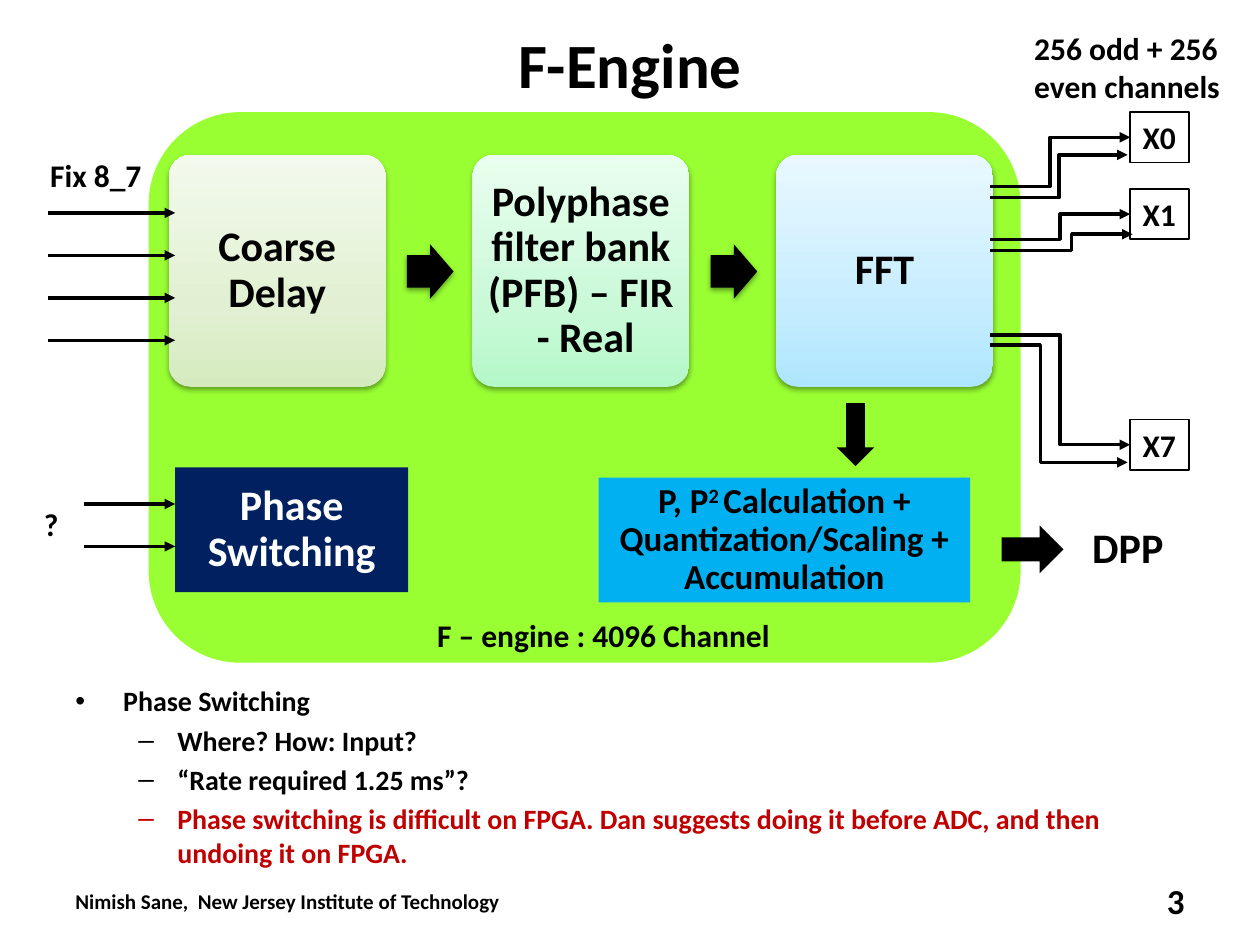
from copy import deepcopy

from lxml.etree import SubElement
from pptx import Presentation
from pptx.dml.color import RGBColor
from pptx.enum.shapes import MSO_CONNECTOR as LINK, MSO_SHAPE as SHAPE
from pptx.enum.text import MSO_ANCHOR as ANCHOR, PP_ALIGN as ALIGN
from pptx.oxml.ns import qn
from pptx.util import Inches, Pt

COLORS = {
    "black": "000000", "white": "FFFFFF", "green": "99FF33",
    "sky": "00B0F0", "navy": "002060", "red": "C00000",
}
STAGES = [
    ("Coarse Delay", ["D5EBBF", "E1F0D2", "F3FAED"]),
    ("Polyphase filter bank (PFB) – FIR  - Real", ["B4F8C8", "CAF9D8", "EAFEEF"]),
    ("FFT", ["AEE6FF", "C6EDFF", "E9F8FF"]),
]
STAGE_LEFT, STAGE_TOP, STAGE_STEP = 1.34, 1.23, 2.41
OUTPUTS = [
    ("X0", 0.89, (1.48, 0.427), (1.57, 8.95, 1.23, 0.5)),
    ("X1", 1.5, (1.9, 0.5), (1.99, 8.99, 1.86, 0.572)),
    ("X7", 3.33, (2.66, 0.5), (2.74, 8.95, 3.67, 0.364)),
]
LABELS = [
    ("Nimish Sane,  New Jersey Institute of Technology", (0.5, 6.95, 3.79, 0.4),
     {"size": 12, "anchor": ANCHOR.MIDDLE}),
    ("3", (7.17, 6.95, 2.33, 0.4),
     {"size": 20, "anchor": ANCHOR.MIDDLE, "align": ALIGN.RIGHT}),
    ("Fix 8_7", (0.3, 1.19, 0.97, 0.4), {}),
    ("DPP", (8.57, 4.09, 0.77, 0.5), {"size": 24, "wrap": False}),
    ("F – engine : 4096 Channel", (3.37, 4.84, 2.85, 0.4), {}),
    ("256 odd + 256 even channels", (8.11, 0.18, 1.72, 0.71), {}),
    ("?", (0.25, 3.96, 0.46, 0.4), {}),
]
NOTES = [
    ("Phase Switching", "•", 0.38, 0.38, "black"),
    ("Where? How: Input?", "–", 0.81, 0.31, "black"),
    ("“Rate required 1.25 ms”?", "–", 0.81, 0.31, "black"),
    ("Phase switching is difficult on FPGA. Dan suggests doing it before ADC, "
     "and then undoing it on FPGA.", "–", 0.81, 0.31, "red"),
]


def rgb(name):
    return RGBColor.from_string(COLORS.get(name, name))


def add_span(para, text, size, color="black"):
    span = para.add_run()
    span.text = text
    for name, value in {"name": "Calibri", "size": Pt(size), "bold": True}.items():
        setattr(span.font, name, value)
    span.font.color.rgb = rgb(color)
    return span


def set_frame(box, anchor=ANCHOR.TOP, wrap=True, inset=None):
    frame = box.text_frame
    frame.word_wrap, frame.vertical_anchor = wrap, anchor
    if inset is not None:
        for side in ("left", "top", "right", "bottom"):
            setattr(frame, f"margin_{side}", Inches(inset))
    return frame


def add_label(page, text, place, size=18, align=ALIGN.LEFT, **frame_format):
    box = page.shapes.add_textbox(*map(Inches, place))
    para = set_frame(box, **frame_format).paragraphs[0]
    para.alignment = align
    add_span(para, text, size)
    return box


def add_block(page, kind, place, color):
    box = page.shapes.add_shape(kind, *map(Inches, place))
    box.shadow.inherit = False
    box.fill.solid()
    box.fill.fore_color.rgb = rgb(color)
    box.line.fill.background()
    return box


def write_block(box, spans, size, color="black", inset=0.12):
    para = set_frame(box, ANCHOR.MIDDLE, inset=inset).paragraphs[0]
    para.alignment, para.line_spacing = ALIGN.CENTER, 0.9
    return [add_span(para, text, size, color) for text in spans]


def add_shadow(box):
    effects = box._element.spPr.find(qn("a:effectLst"))
    shadow = SubElement(effects, qn("a:outerShdw"), blurRad=str(Pt(3.1)),
                        dist=str(Pt(1.6)), dir="5400000", rotWithShape="0")
    color = SubElement(shadow, qn("a:srgbClr"), val=COLORS["black"])
    SubElement(color, qn("a:alpha"), val="38000")


def set_gradient(box, colors):
    box.fill.gradient()
    box.fill.gradient_angle = 90
    stops = box._element.spPr.find(".//" + qn("a:gsLst"))
    stops.insert(1, deepcopy(stops[0]))
    for stop, color, position in zip(box.fill.gradient_stops, colors, (0, 0.35, 1)):
        stop.color.rgb, stop.position = rgb(color), position


def add_arrow(page, start, end, bend=None, target=None):
    kind = LINK.STRAIGHT if bend is None else LINK.ELBOW
    arrow = page.shapes.add_connector(kind, *map(Inches, start + end))
    if target is not None:
        arrow.end_connect(target, 1)
    arrow.line.color.rgb, arrow.line.width = rgb("black"), Pt(2)
    SubElement(arrow.line._get_or_add_ln(), qn("a:tailEnd"), type="triangle")
    properties = arrow._element.spPr
    SubElement(properties, qn("a:effectLst"))
    if bend is not None:
        guides = properties.find(".//" + qn("a:avLst"))
        SubElement(guides, qn("a:gd"), name="adj1", fmla=f"val {round(bend * 100000)}")


def add_stages(page):
    for index, (text, colors) in enumerate(STAGES):
        left = STAGE_LEFT + index * STAGE_STEP
        box = add_block(page, SHAPE.ROUNDED_RECTANGLE, (left, STAGE_TOP, 1.72, 1.84), colors[0])
        box.adjustments[0] = 0.1
        set_gradient(box, colors)
        add_shadow(box)
        write_block(box, [text], 24, inset=0.05)
        if index < len(STAGES) - 1:
            arrow = add_block(page, SHAPE.RIGHT_ARROW, (left + 1.89, 1.94, 0.37, 0.43), "black")
            arrow.adjustments[0] = 0.6
            add_shadow(arrow)


def add_outputs(page):
    for text, top, (start, bend), (low_start, low_x, low_y, low_bend) in OUTPUTS:
        box = add_label(page, text, (8.97, top, 0.47, 0.4), wrap=False)
        box.line.color.rgb, box.line.width = rgb("black"), Pt(1)
        add_arrow(page, (7.86, start), (8.97, top + 0.2), bend, box)
        add_arrow(page, (7.86, low_start), (low_x, low_y), low_bend)


def add_notes(page):
    box = page.shapes.add_textbox(*map(Inches, (0.5, 5.38, 9, 1.44)))
    frame = set_frame(box)
    for index, (text, bullet, margin, hang, color) in enumerate(NOTES):
        para = frame.add_paragraph() if index else frame.paragraphs[0]
        para.space_before = Pt(3.2)
        add_span(para, text, 16, color)
        properties = para._p.get_or_add_pPr()
        properties.set("marL", str(Inches(margin)))
        properties.set("indent", str(Inches(-hang)))
        SubElement(properties, qn("a:buFont"), typeface="Arial")
        SubElement(properties, qn("a:buChar"), char=bullet)


def main():
    deck = Presentation()
    deck.slide_width, deck.slide_height = Inches(10), Inches(7.5)
    page = deck.slides.add_slide(deck.slide_layouts[6])

    add_label(page, "F-Engine", (0.5, 0.14, 9, 0.72), 36, ALIGN.CENTER, anchor=ANCHOR.MIDDLE)
    add_block(page, SHAPE.ROUNDED_RECTANGLE, (1.18, 0.89, 6.92, 4.37), "green")
    add_stages(page)

    power = add_block(page, SHAPE.RECTANGLE, (4.75, 3.79, 2.95, 0.99), "sky")
    spans = write_block(
        power, ["P, P", "2 ", "Calculation + Quantization/Scaling + Accumulation"], 20)
    spans[1].font._element.set("baseline", "30000")
    add_block(page, SHAPE.DOWN_ARROW, (6.64, 3.2, 0.3, 0.5), "black")
    add_block(page, SHAPE.RIGHT_ARROW, (7.95, 4.17, 0.49, 0.38), "black")
    switching = add_block(page, SHAPE.RECTANGLE, (1.39, 3.71, 1.85, 0.99), "navy")
    write_block(switching, ["Phase Switching"], 24, "white")

    add_outputs(page)
    for left, top, count in ((0.38, 1.69, 4), (0.67, 4, 2)):
        for index in range(count):
            y = top + index * 0.337
            add_arrow(page, (left, y), (1.39, y))
    for text, place, text_format in LABELS:
        add_label(page, text, place, **text_format)
    add_notes(page)
    deck.save("out.pptx")


if __name__ == "__main__":
    main()
